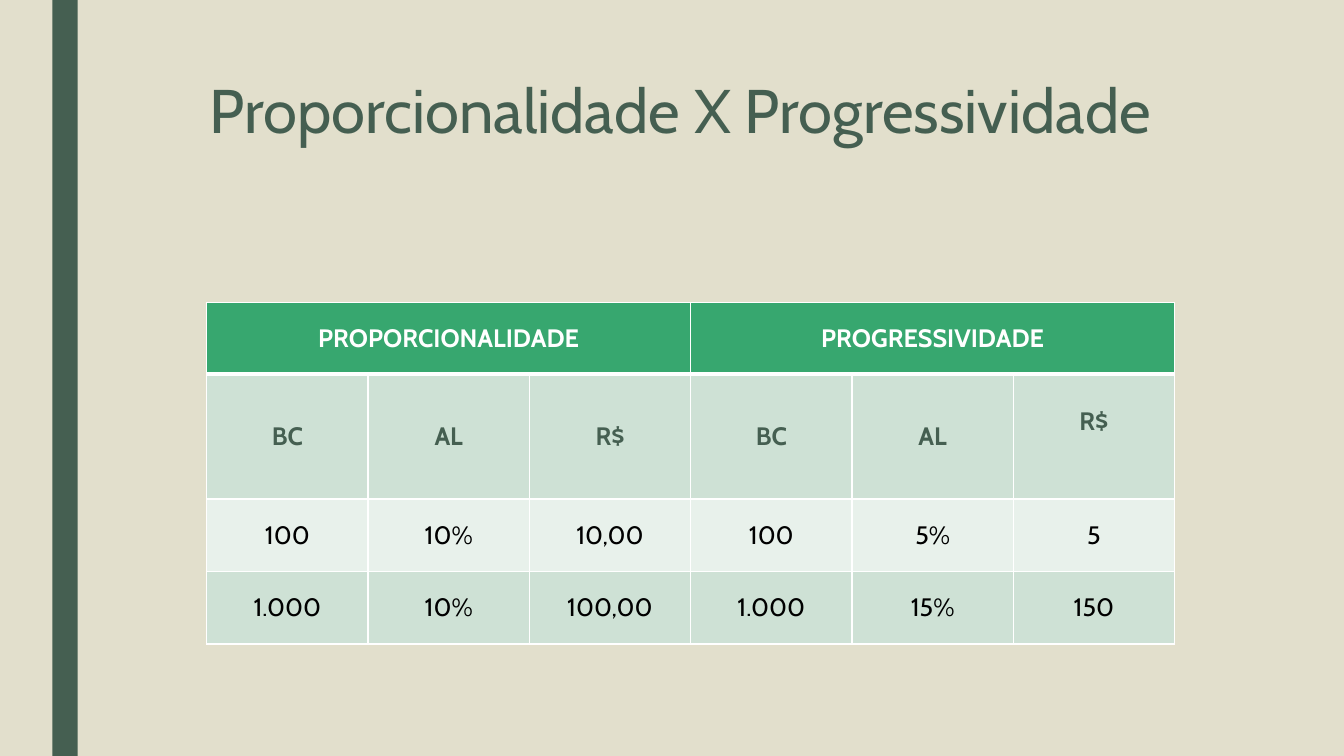
from lxml.etree import SubElement
from pptx import Presentation
from pptx.dml.color import RGBColor
from pptx.enum.shapes import MSO_SHAPE as Shape
from pptx.enum.text import MSO_ANCHOR as Anchor, PP_ALIGN as Align
from pptx.oxml.ns import qn
from pptx.util import Inches, Pt

WIDTH, HEIGHT = 13.33, 7.5
FONT = "Cabin"
COLORS = {
    "background": "E2DFCC",
    "dark": "455F51",
    "header": "37A76F",
    "band": "CEE1D5",
    "light": "E8F1EB",
    "white": "FFFFFF",
    "black": "000000",
}

# Table grid: column width, row heights and row styles (fill, text, bold)
COLUMN = 1.6
GROUP_SIZE = 3
ROW_HEIGHTS = [0.71, 1.24, 0.72, 0.72]
ROW_STYLES = [
    ("header", "white", True),
    ("band", "dark", True),
    ("light", "black", False),
    ("band", "black", False),
]
GROUPS = ["PROPORCIONALIDADE", "PROGRESSIVIDADE"]
ROWS = [
    ["BC", "AL", "R$"] * len(GROUPS),
    ["100", "10%", "10,00", "100", "5%", "5"],
    ["1.000", "10%", "100,00", "1.000", "15%", "150"],
]


def color(name):
    return RGBColor.from_string(COLORS[name])


def paint(fill, name):
    fill.solid()
    fill.fore_color.rgb = color(name)


def write(frame, text, size, name, bold=False):
    para = frame.paragraphs[0]
    para.alignment = Align.CENTER
    span = para.add_run()
    span.text = text
    span.font.name = FONT
    span.font.size = Pt(size)
    span.font.bold = bold
    span.font.color.rgb = color(name)
    return para


def add_side_bar(page):
    bar = page.shapes.add_shape(
        Shape.RECTANGLE, Inches(0.52), 0, Inches(0.25), Inches(HEIGHT))
    bar.shadow.inherit = False
    paint(bar.fill, "dark")
    bar.line.fill.background()


def add_title(page, text):
    box = page.shapes.add_textbox(
        Inches(1.5), Inches(0.75), Inches(10.5), Inches(1.62))
    box.text_frame.word_wrap = True
    box.text_frame.vertical_anchor = Anchor.TOP
    write(box.text_frame, text, 44, "dark").line_spacing = 0.89


def add_borders(cell, top, bottom):
    properties = cell._tc.get_or_add_tcPr()
    for side, points in (("L", 1), ("R", 1), ("T", top), ("B", bottom)):
        line = SubElement(properties, qn(f"a:ln{side}"), w=str(Pt(points)))
        fill = SubElement(line, qn("a:solidFill"))
        SubElement(fill, qn("a:srgbClr"), val=COLORS["white"])


def add_rate_table(page):
    columns = GROUP_SIZE * len(GROUPS)
    frame = page.shapes.add_table(
        len(ROW_HEIGHTS), columns, Inches(2.05), Inches(3),
        Inches(COLUMN * columns), Inches(sum(ROW_HEIGHTS)))
    table = frame.table
    for column in table.columns:
        column.width = Inches(COLUMN)

    # Fills and borders, with a thick rule under the header
    for index, height in enumerate(ROW_HEIGHTS):
        table.rows[index].height = Inches(height)
        for cell in table.rows[index].cells:
            add_borders(cell, top=3 if index == 1 else 1,
                        bottom=3 if index == 0 else 1)
            paint(cell.fill, ROW_STYLES[index][0])
            cell.vertical_anchor = Anchor.MIDDLE

    # Group headings, each across its columns
    for group, heading in enumerate(GROUPS):
        first = group * GROUP_SIZE
        cell = table.cell(0, first)
        cell.merge(table.cell(0, first + GROUP_SIZE - 1))
        write(cell.text_frame, heading, 18, *ROW_STYLES[0][1:])

    # Column labels and values
    for row, texts in enumerate(ROWS, start=1):
        for column, text in enumerate(texts):
            write(table.cell(row, column).text_frame, text, 18,
                  *ROW_STYLES[row][1:])

    # The last label sits a little higher than its neighbours
    table.cell(1, columns - 1).margin_bottom = Inches(0.35)


def main():
    deck = Presentation()
    deck.slide_width, deck.slide_height = Inches(WIDTH), Inches(HEIGHT)
    page = deck.slides.add_slide(deck.slide_layouts[6])
    paint(page.background.fill, "background")
    add_side_bar(page)
    add_title(page, "Proporcionalidade X Progressividade")
    add_rate_table(page)
    deck.save("out.pptx")


if __name__ == "__main__":
    main()
